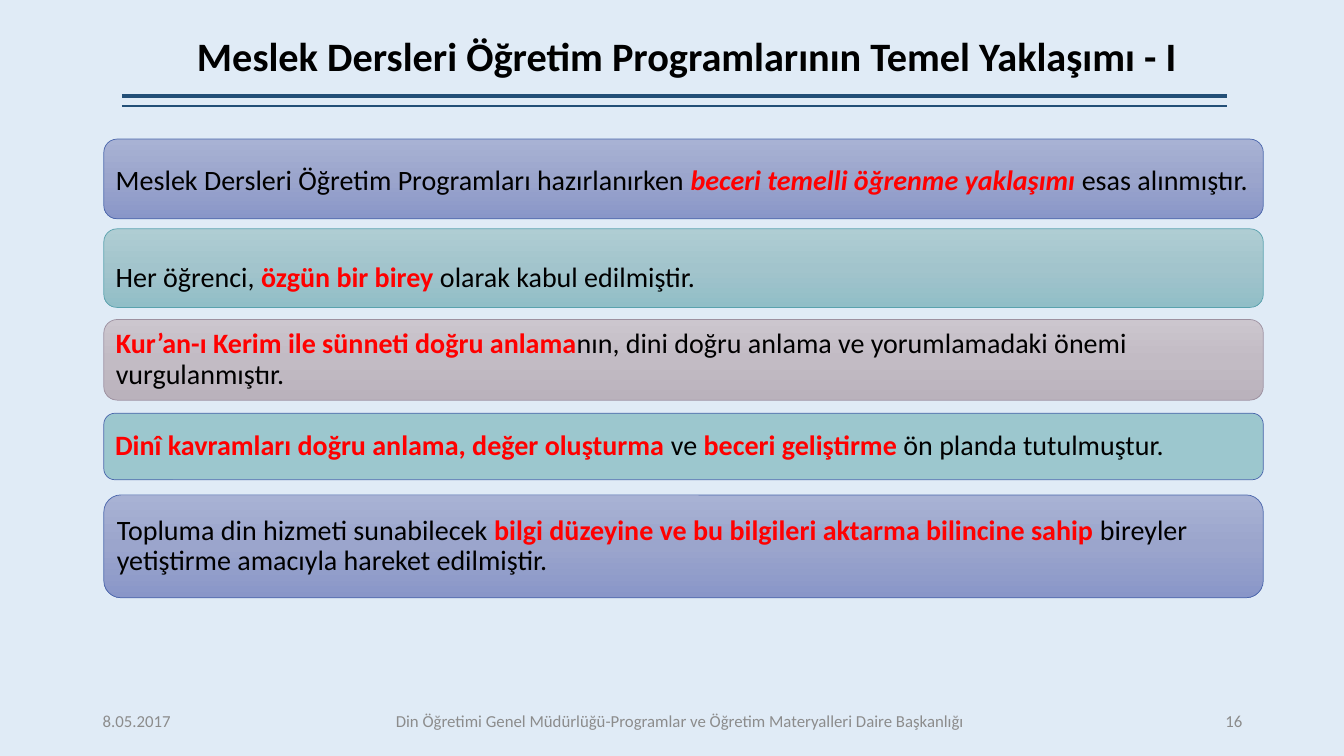
from copy import deepcopy

from lxml.etree import SubElement
from pptx import Presentation
from pptx.dml.color import RGBColor
from pptx.enum.shapes import MSO_CONNECTOR as CONNECTOR, MSO_SHAPE as SHAPE
from pptx.enum.text import MSO_ANCHOR as ANCHOR, PP_ALIGN as ALIGN
from pptx.oxml.ns import qn
from pptx.util import Pt

PX = 9144
FONT = "Calibri"
COLORS = {
    "background": "E0EBF6",
    "rule": "234F77",
    "text": "000000",
    "emphasis": "FF0000",
    "footer": "8C8C8C",
}
BLUE = (("A8B2D4", "9BA5CC", "8996C8"), "4A66AC")
TEAL = (("AFCDD3", "A2C4CC", "91BEC7"), "5AA2AE")
MAUVE = (("CCC6CE", "C2BBC4", "BAB2BC"), "9D90A0")
FLAT_TEAL = (("9CC7CE",), "4A66AC")

PRINCIPLES = [
    (138, 79, BLUE, 1.0, [
        ("Meslek Dersleri Öğretim Programları hazırlanırken ", ""),
        ("beceri temelli öğrenme yaklaşımı ", "bi"),
        ("esas alınmıştır.", ""),
    ]),
    (227, 78, TEAL, 1.5, [
        ("Her öğrenci, ", ""),
        ("özgün bir birey ", "b"),
        ("olarak kabul edilmiştir.", ""),
    ]),
    (317, 80, MAUVE, 0.9, [
        ("Kur’an-ı Kerim ile sünneti doğru anlama", "b"),
        ("nın, dini doğru anlama ve yorumlamadaki önemi vurgulanmıştır.", ""),
    ]),
    (410, 66, FLAT_TEAL, 0.9, [
        ("Dinî kavramları doğru anlama, değer oluşturma ", "b"),
        ("ve ", ""),
        ("beceri geliştirme ", "b"),
        ("ön planda tutulmuştur.", ""),
    ]),
    (491, 102, BLUE, 0.9, [
        ("Topluma din hizmeti sunabilecek ", ""),
        ("bilgi düzeyine ve bu bilgileri aktarma bilincine sahip ", "b"),
        ("bireyler yetiştirme amacıyla hareket edilmiştir.", ""),
    ]),
]
FOOTER = [
    (0, 125, "8.05.2017", ALIGN.LEFT),
    (158, 849, "Din Öğretimi Genel Müdürlüğü-Programlar ve Öğretim "
               "Materyalleri Daire Başkanlığı", ALIGN.CENTER),
    (1034, 116, "16", ALIGN.RIGHT),
]


def rgb(code):
    """Turn a hex string into a colour."""
    return RGBColor.from_string(code)


def emu(*lengths):
    """Turn px lengths into EMU."""
    return [length * PX for length in lengths]


def style_font(font, size, color, bold=False, italic=False):
    """Set the look of a run."""
    font.name, font.size, font.bold, font.italic = FONT, Pt(size), bold, italic
    font.color.rgb = rgb(color)


def add_label(slide, box, text, size, color, align, bold=False):
    """Place one line of text, centred vertically in the box."""
    frame = slide.shapes.add_textbox(*emu(*box)).text_frame
    frame.word_wrap = True
    frame.vertical_anchor = ANCHOR.MIDDLE
    frame.text = text
    paragraph = frame.paragraphs[0]
    paragraph.alignment = align
    style_font(paragraph.runs[0].font, size, color, bold)
    return paragraph


def add_header(slide, box):
    """Place the title and the double rule under it."""
    left, top, width, height = box
    title = add_label(slide, box, "Meslek Dersleri Öğretim Programlarının Temel Yaklaşımı - I",
                      28.8, COLORS["text"], ALIGN.CENTER, True)
    title.line_spacing = 0.9
    for offset, weight in ((79, 3), (89, 1)):
        y = top + offset
        rule = slide.shapes.add_connector(
            CONNECTOR.STRAIGHT, *emu(left, y, left + width - 25, y))
        rule.line.color.rgb = rgb(COLORS["rule"])
        rule.line.width = Pt(weight)
        SubElement(rule._element.spPr, qn("a:effectLst"))


def fill_bar(bar, shades):
    """Fill a bar with one shade or a downward gradient of three."""
    if len(shades) == 1:
        bar.fill.solid()
        bar.fill.fore_color.rgb = rgb(shades[0])
        return
    bar.fill.gradient()
    bar.fill.gradient_angle = 270
    first_stop = next(bar._element.spPr.iter(qn("a:gs")))
    first_stop.addnext(deepcopy(first_stop))
    for index, (stop, shade) in enumerate(zip(bar.fill.gradient_stops, shades)):
        stop.position = index / 2
        stop.color.rgb = rgb(shade)


def add_principle(slide, box, theme, spacing, phrases):
    """Place a rounded bar with its statement."""
    shades, outline = theme
    bar = slide.shapes.add_shape(SHAPE.ROUNDED_RECTANGLE, *emu(*box))
    bar.shadow.inherit = False
    fill_bar(bar, shades)
    bar.line.color.rgb = rgb(outline)
    bar.line.width = Pt(0.5)
    frame = bar.text_frame
    frame.word_wrap = True
    frame.vertical_anchor = ANCHOR.MIDDLE
    frame.margin_left = frame.margin_top = frame.margin_right = frame.margin_bottom = 8 * PX
    statement = frame.paragraphs[0]
    statement.alignment = ALIGN.LEFT
    statement.line_spacing = spacing
    for text, style in phrases:
        phrase = statement.add_run()
        phrase.text = text
        color = COLORS["emphasis" if style else "text"]
        style_font(phrase.font, 20, color, "b" in style, "i" in style)


def add_principles(slide, left, width):
    """Stack the principle bars in one column."""
    for top, height, theme, spacing, phrases in PRINCIPLES:
        add_principle(slide, (left, top, width, height), theme, spacing, phrases)


def add_footer(slide, left, top, height):
    """Place the date, the department and the page number."""
    for offset, width, text, align in FOOTER:
        add_label(slide, (left + offset, top, width, height), text, 12,
                  COLORS["footer"], align)


def main():
    """Build and save the slide."""
    deck = Presentation()
    deck.slide_width, deck.slide_height = emu(1333, 750)
    slide = deck.slides.add_slide(deck.slide_layouts[6])
    slide.background.fill.solid()
    slide.background.fill.fore_color.rgb = rgb(COLORS["background"])
    add_header(slide, (121, 16, 1121, 84))
    add_principles(slide, 103, 1150)
    add_footer(slide, 92, 695, 40)
    deck.save("out.pptx")


if __name__ == "__main__":
    main()
